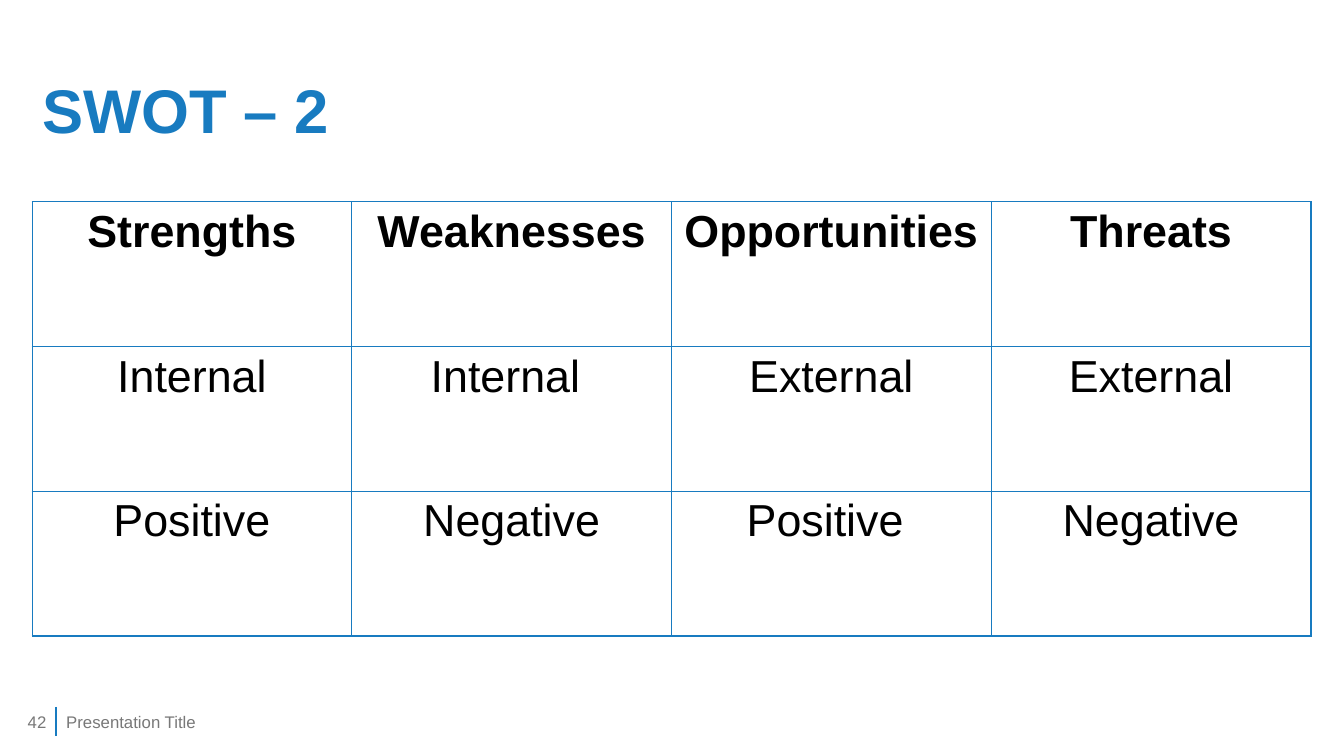
"""Build the SWOT overview slide."""
from lxml.etree import SubElement
from pptx import Presentation
from pptx.dml.color import RGBColor
from pptx.enum.shapes import MSO_CONNECTOR
from pptx.enum.text import MSO_ANCHOR, PP_ALIGN
from pptx.oxml import parse_xml
from pptx.oxml.ns import nsdecls, qn
from pptx.util import Cm, Pt

COLORS = {"accent": "187BC0", "body": "000000", "footer": "787878"}
FORMATS = {
    "title": {"size": Pt(44), "bold": True},
    "heading": {"size": Pt(32), "bold": True},
    "body": {"size": Pt(32), "bold": False},
    "footer": {"size": Pt(12), "bold": False},
}
SWOT = [
    ["Strengths", "Weaknesses", "Opportunities", "Threats"],
    ["Internal", "Internal ", "External", "External"],
    ["Positive", "Negative", "Positive ", "Negative"],
]


class SlideBuilder:
    def __init__(self, slide, font_name="Arial"):
        self.slide = slide
        self.font_name = font_name

    def wording(self, frame, text, style, color, align=PP_ALIGN.LEFT, spacing=1.0):
        paragraph = frame.paragraphs[0]
        paragraph.alignment = align
        paragraph.line_spacing = spacing
        run = paragraph.add_run()
        run.text = text
        for attribute, value in {"name": self.font_name, **FORMATS[style]}.items():
            setattr(run.font, attribute, value)
        run.font.color.rgb = RGBColor.from_string(COLORS[color])

    def text(self, area, text, style, color, **layout):
        frame = self.slide.shapes.add_textbox(*map(Cm, area)).text_frame
        frame.word_wrap = True
        frame.vertical_anchor = MSO_ANCHOR.MIDDLE
        self.wording(frame, text, style, color, **layout)

    def line(self, start, end, width):
        divider = self.slide.shapes.add_connector(
            MSO_CONNECTOR.STRAIGHT, *map(Cm, start + end))
        divider.line.color.rgb = RGBColor.from_string(COLORS["accent"])
        divider.line.width = Pt(width)
        SubElement(divider.element.spPr, qn("a:effectLst"))

    def border(self, cell, width):
        properties = cell._tc.get_or_add_tcPr()
        for position, side in enumerate(("lnL", "lnR", "lnT", "lnB")):
            properties.insert(position, parse_xml(
                f'<a:{side} {nsdecls("a")} w="{Pt(width)}"><a:solidFill>'
                f'<a:srgbClr val="{COLORS["accent"]}"/></a:solidFill></a:{side}>'))

    def table(self, area, rows):
        grid = self.slide.shapes.add_table(
            len(rows), len(rows[0]), *map(Cm, area)).table
        grid.first_row = grid.horz_banding = False
        for row, words in enumerate(rows):
            for column, word in enumerate(words):
                cell = grid.cell(row, column)
                cell.fill.background()
                self.border(cell, 1)
                style = "body" if row else "heading"
                self.wording(cell.text_frame, word, style, "body", PP_ALIGN.CENTER)


def main():
    deck = Presentation()
    deck.slide_width, deck.slide_height = Cm(33.87), Cm(19.05)
    builder = SlideBuilder(deck.slides.add_slide(deck.slide_layouts[6]))
    builder.line((1.42, 17.81), (1.42, 18.54), 1.5)
    builder.text((0.81, 1.02, 32.23, 3.68), "SWOT – 2", "title", "accent", spacing=0.9)
    builder.table((0.81, 5.08, 32.23, 10.95), SWOT)
    builder.text((1.42, 17.68, 16.56, 1.02), "Presentation Title", "footer", "footer")
    builder.text((0, 17.68, 1.42, 1.02), "42", "footer", "footer", align=PP_ALIGN.RIGHT)
    deck.save("out.pptx")


if __name__ == "__main__":
    main()
